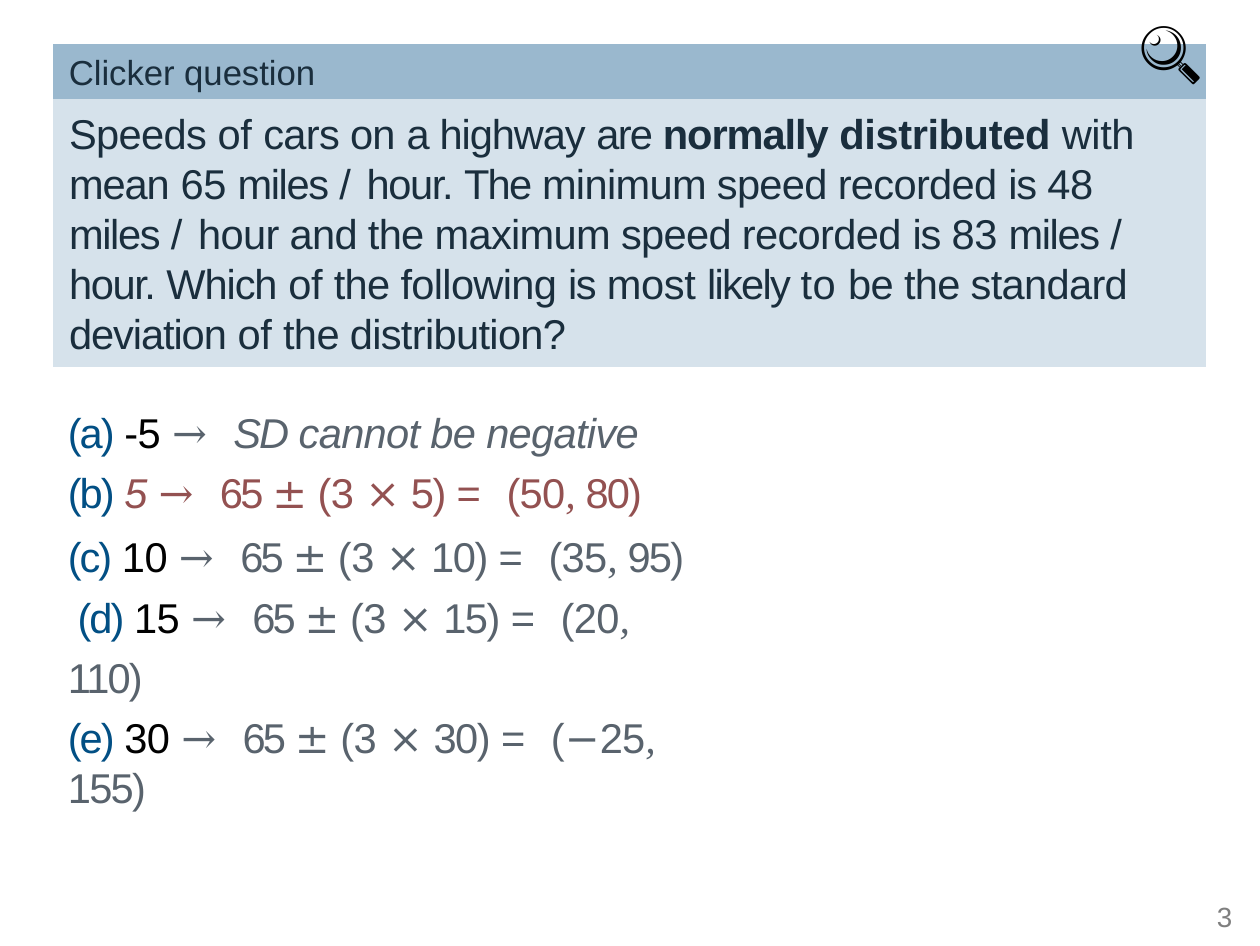
import pptx
import pptx.util
import pptx.dml.color
import pptx.enum.text

Pt = pptx.util.Pt
Color = pptx.dml.color.RGBColor
Text = pptx.enum.text

HEAD = Color(0x9A, 0xB8, 0xCE)
PANEL = Color(0xD6, 0xE2, 0xEB)
INK = Color(0x1A, 0x2E, 0x3D)
BLUE = Color(0x02, 0x4F, 0x84)
BLACK = Color(0, 0, 0)
SLATE = Color(0x59, 0x63, 0x6D)
RED = Color(0x93, 0x51, 0x51)
GREY = Color(0x7F, 0x7F, 0x7F)

SANS = "Arial"
MATH = "DejaVu Serif"
SERIF = "Times New Roman"

QUERY = [
    ("Speeds ", -0.2), ("of ", -0.1), ("cars on ", -0.2), ("a ", -0.5),
    ("highway ", -0.3), ("are ", -0.5), ("normally ", -0.3, True),
    ("distributed ", -0.1, True), ("with ", -0.1), ("mean ", -0.3),
    ("65 ", -0.1), ("miles ", -0.4), ("/ ", 0.6), ("hour. ", -0.4),
    ("The ", -0.5), ("minimum speed recorded ", -0.2), ("is ", -0.4),
    ("48 ", -0.1), ("miles ", -0.4), ("/ ", 0.6),
    ("hour and the maximum speed recorded ", -0.2), ("is ", -0.4),
    ("83 ", -0.1), ("miles ", -0.4), ("/ ", 0.6), ("hour. ", -0.4),
    ("Which ", -0.3), ("of ", -0.1), ("the following ", -0.2),
    ("is ", -0.4), ("most ", -0.1), ("likely ", -0.5), ("to ", 0.1),
    ("be the standard ", -0.2), ("deviation ", -0.3), ("of ", -0.1),
    ("the distribution?", -0.2),
]


def say(par, text, font=SANS, size=12, color=INK, gap=0, bold=False, slant=False):
    run = par.add_run()
    run.text = text
    run.font.name = font
    run.font.size = Pt(size)
    run.font.color.rgb = color
    run.font.bold = bold
    run.font.italic = slant
    run.font._element.set("spc", str(round(gap * 100)))


def fit(shape, left, top, width, height):
    shape.left, shape.top = Pt(left), Pt(top)
    shape.width, shape.height = Pt(width), Pt(height)
    frame = shape.text_frame
    frame.word_wrap = True
    frame.auto_size = Text.MSO_AUTO_SIZE.NONE
    frame.vertical_anchor = Text.MSO_ANCHOR.TOP
    frame.margin_left = frame.margin_top = Pt(1)
    frame.margin_right = frame.margin_bottom = 0
    par = frame.paragraphs[0]
    par.alignment = Text.PP_ALIGN.LEFT
    par.space_before = Pt(1)
    return frame


def box(slide, *place):
    return fit(slide.shapes.add_textbox(0, 0, 0, 0), *place)


def band(slide, top, height, color):
    left, right = Pt(15.2), Pt(347.6)
    low = Pt(top + height)
    pen = slide.shapes.build_freeform(left, Pt(top), scale=1.0)
    pen.add_line_segments([(right, Pt(top)), (right, low), (left, low)])
    shape = pen.convert_to_shape()
    shape.shadow.inherit = False
    shape.fill.solid()
    shape.fill.fore_color.rgb = color
    shape.line.fill.background()


def label(par, mark, value, color=BLACK, tone=SLATE, slant=False):
    say(par, f"({mark}) ", color=BLUE, gap=-0.6)
    say(par, f"{value} ", color=color, gap=-0.1, slant=slant)
    say(par, "→ ", font=MATH, color=tone, gap=1.9)


def range_of(par, spread, low, high, color=SLATE, sign=""):
    say(par, "65 ", color=color, gap=-0.8)
    say(par, "± ", font=MATH, color=color, gap=-0.8)
    say(par, "(3 ", color=color, gap=-0.1)
    say(par, "× ", font=MATH, color=color, gap=-0.8)
    say(par, f"{spread}) ", color=color, gap=-0.4)
    say(par, "= ", color=color, gap=2)
    say(par, "(", color=color, gap=-0.2)
    if sign:
        say(par, sign, font=MATH, color=color, gap=-0.3)
    say(par, f"{low}", color=color, gap=-0.2)
    say(par, ", ", font=SERIF, color=color, gap=-0.2, slant=True)
    say(par, f"{high})", color=color, gap=-0.5)


def line(frame, before, space=1.21):
    par = frame.add_paragraph()
    par.space_before = Pt(before)
    par.line_spacing = space
    return par


def answers(slide):
    frame = box(slide, 18.6, 113.2, 182, 89.3)
    par = frame.paragraphs[0]
    par.line_spacing = 1.21
    label(par, "a", "-5")
    say(par, "SD ", color=SLATE, gap=-0.6, slant=True)
    say(par, "cannot be negative", color=SLATE, gap=-0.2, slant=True)

    par = line(frame, 0)
    label(par, "b", 5, color=RED, tone=RED, slant=True)
    range_of(par, 5, 50, 80, color=RED)

    par = line(frame, 1)
    label(par, "c", 10)
    range_of(par, 10, 35, 95)

    par = line(frame, 0)
    par._p.get_or_add_pPr().set("indent", str(Pt(2.8)))
    label(par, "d", 15)
    range_of(par, 15, 20, 110)

    par = line(frame, 3, 1.0)
    label(par, "e", 30)
    range_of(par, 30, 25, 155, sign="−")


def main():
    deck = pptx.Presentation()
    deck.slide_width, deck.slide_height = Pt(363), Pt(272.5)
    slide = deck.slides.add_slide(deck.slide_layouts[5])

    band(slide, 12.7, 15.9, HEAD)
    band(slide, 28.6, 77.2, PANEL)
    head = box(slide, 18.9, 13.7, 74.2, 13.7)
    say(head.paragraphs[0], "Clicker question", size=10)

    title = slide.shapes.title
    title.element.getparent().append(title.element)
    par = fit(title, 18.9, 30.2, 311, 74).paragraphs[0]
    for text, gap, *bold in QUERY:
        say(par, text, gap=gap, bold=bool(bold))

    page = box(slide, 349.6, 258.3, 6.5, 11.5)
    say(page.paragraphs[0], "3", size=8, color=GREY)
    answers(slide)
    lens = box(slide, 327.2, 2.2, 30, 26)
    say(lens.paragraphs[0], "🔍", font="Calibri", size=18, color=BLACK)
    deck.save("out.pptx")


if __name__ == "__main__":
    main()
